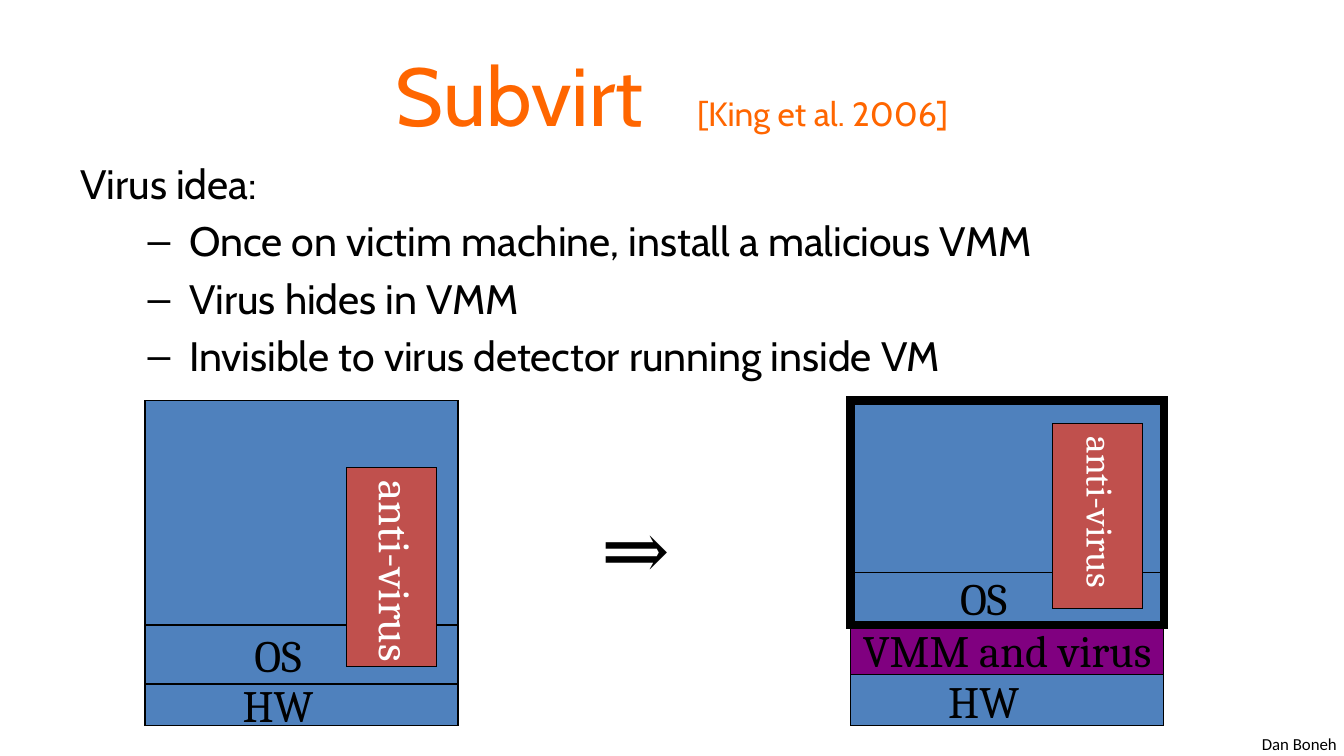
from lxml.etree import SubElement
from pptx import Presentation
from pptx.dml.color import RGBColor
from pptx.enum.shapes import MSO_SHAPE as Shape
from pptx.enum.text import MSO_ANCHOR as Anchor, PP_ALIGN as Align
from pptx.oxml.ns import qn
from pptx.util import Inches, Pt

THEME = {
    "orange": "FF6600", "black": "000000", "white": "FFFFFF",
    "blue": "4F81BD", "red": "C0504D", "purple": "800080",
    "heading": "Cabin", "label": "Cambria", "credit": "Calibri", "dash": "Arial",
    "title_size": 44, "body_size": 22, "label_size": 24,
    "small_label_size": 20, "citation_size": 18, "credit_size": 9,
    "thin": 0.75, "thick": 4.5,
}

TITLE, CITATION = "Subvirt", "[King et al. 2006]"
IDEA = "Virus idea:"
STEPS = [
    "Once on victim machine, install a malicious VMM",
    "Virus hides in VMM",
    "Invisible to virus detector running inside VM",
]
ARROW, AUTHOR = "⇒", "Dan Boneh"
SCANNER = "anti-virus"

SLIDE_WIDTH = Inches(10)
SLIDE_HEIGHT = SLIDE_WIDTH * 9 // 16
STACK_TOP, STACK_WIDTH, STACK_HEIGHT = 2.98, 2.33, 2.42
SCANNER_OFFSET, SCANNER_WIDTH = 1.5, 0.67
LABEL_SHIFT = 0.35

MACHINES = [
    {"left": 1.08, "layers": [("HW", 0.31, "blue", LABEL_SHIFT), ("OS", 0.44, "blue", LABEL_SHIFT)],
     "scanner": (3.48, 1.48, "label_size"), "guest_height": None},
    {"left": 6.33, "layers": [("HW", 0.38, "blue", LABEL_SHIFT), ("VMM and virus", 0.38, "purple", 0),
                              ("OS", 0.38, "blue", LABEL_SHIFT)],
     "scanner": (3.15, 1.38, "small_label_size"), "guest_height": 1.67},
]


def color(name):
    return RGBColor.from_string(THEME[name])


def apply(target, formats):
    for key, value in formats.items():
        setattr(target, key, value)


def write(paragraph, text, font, size, ink="black"):
    run = paragraph.add_run()
    run.text = text
    apply(run.font, {"name": THEME[font], "size": Pt(THEME[size])})
    run.font.color.rgb = color(ink)
    return run


def add_text(slide, box, **formats):
    frame = slide.shapes.add_textbox(*map(Inches, box)).text_frame
    apply(frame, {"word_wrap": True, **formats})
    return frame


def add_block(slide, box, fill=None, line="thin"):
    block = slide.shapes.add_shape(Shape.RECTANGLE, *map(Inches, box))
    block.shadow.inherit = False
    if fill:
        block.fill.solid()
        block.fill.fore_color.rgb = color(fill)
    else:
        block.fill.background()
    block.line.color.rgb = color("black")
    block.line.width = Pt(THEME[line])
    SubElement(block.line._get_or_add_ln(), qn("a:miter")).set("lim", "800000")
    return block


def label(block, text, size="label_size", ink="black", shift=0, **formats):
    frame = block.text_frame
    apply(frame, {"word_wrap": False, "vertical_anchor": Anchor.MIDDLE,
                  "margin_right": Inches(0.1 + shift)})
    paragraph = frame.paragraphs[0]
    apply(paragraph, {"alignment": Align.CENTER, **formats})
    write(paragraph, text, "label", size, ink)
    return frame


def add_dash(paragraph):
    props = paragraph._p.get_or_add_pPr()
    props.set("marL", str(Inches(0.81)))
    props.set("indent", str(Inches(-0.31)))
    SubElement(props, qn("a:buFont")).set("typeface", THEME["dash"])
    SubElement(props, qn("a:buChar")).set("char", "–")


def add_machine(slide, machine):
    left, base = machine["left"], STACK_TOP + STACK_HEIGHT
    add_block(slide, (left, STACK_TOP, STACK_WIDTH, STACK_HEIGHT), "blue")
    for name, height, fill, shift in machine["layers"]:
        base -= height
        label(add_block(slide, (left, base, STACK_WIDTH, height), fill), name, shift=shift)
    top, height, size = machine["scanner"]
    scanner = add_block(slide, (left + SCANNER_OFFSET, top, SCANNER_WIDTH, height), "red")
    frame = label(scanner, SCANNER, size, "white", line_spacing=0.8)
    frame._txBody.bodyPr.set("vert", "eaVert")
    if machine["guest_height"]:
        add_block(slide, (left, STACK_TOP, STACK_WIDTH, machine["guest_height"]), line="thick")


def main():
    """Build the Subvirt slide and save it."""
    deck = Presentation()
    apply(deck, {"slide_width": SLIDE_WIDTH, "slide_height": SLIDE_HEIGHT})
    slide = deck.slides.add_slide(deck.slide_layouts[6])

    credit = add_text(slide, (9.29, 5.41, 0.76, 0.25), word_wrap=False)
    write(credit.paragraphs[0], AUTHOR, "credit", "credit_size")

    heading = add_text(slide, (0.5, 0.23, 9, 0.94), vertical_anchor=Anchor.MIDDLE).paragraphs[0]
    heading.alignment = Align.CENTER
    write(heading, TITLE, "heading", "title_size", "orange")
    gap = write(heading, " ", "heading", "title_size", "orange")
    gap.font._element.set("spc", "1900")
    write(heading, CITATION, "heading", "citation_size", "orange")

    body = add_text(slide, (0.5, 1.13, 9.17, 4.38))
    for index, text in enumerate([IDEA, *STEPS]):
        paragraph = body.add_paragraph() if index else body.paragraphs[0]
        paragraph.space_before = Pt(0.2 * THEME["body_size"])
        if index:
            paragraph.level = 1
            add_dash(paragraph)
        write(paragraph, text, "heading", "body_size")

    for machine in MACHINES:
        add_machine(slide, machine)

    arrow = add_text(slide, (4.33, 3.65, 0.81, 0.84), word_wrap=False).paragraphs[0]
    arrow.alignment = Align.CENTER
    write(arrow, ARROW, "label", "title_size")

    deck.save("out.pptx")


if __name__ == "__main__":
    main()
